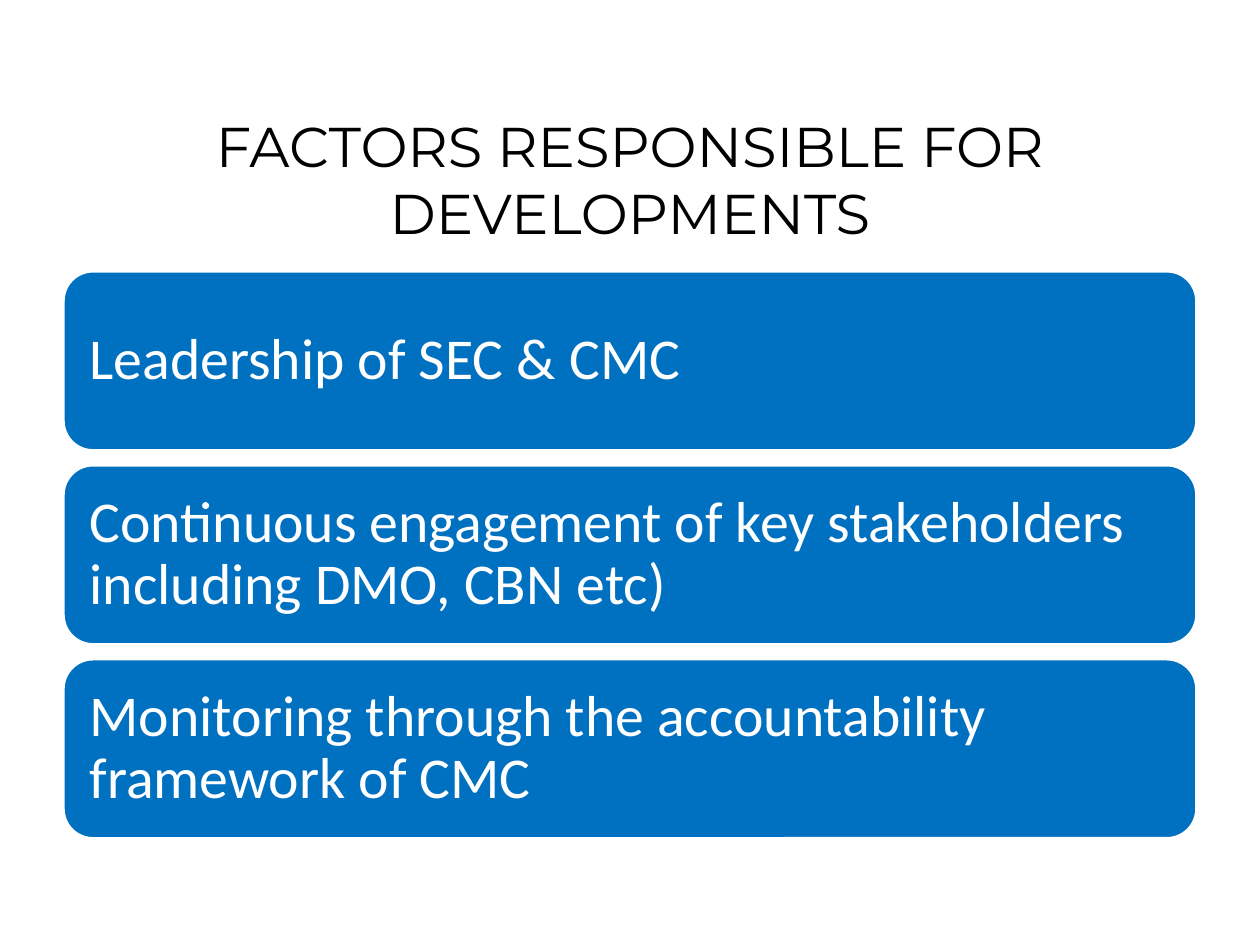
from dataclasses import dataclass

from pptx import Presentation
from pptx.dml.color import RGBColor
from pptx.enum.shapes import MSO_SHAPE
from pptx.enum.text import MSO_ANCHOR, PP_ALIGN
from pptx.util import Cm, Pt


@dataclass(frozen=True)
class Theme:
    black: RGBColor = RGBColor(0x00, 0x00, 0x00)
    white: RGBColor = RGBColor(0xFF, 0xFF, 0xFF)
    blue: RGBColor = RGBColor(0x00, 0x70, 0xC0)
    title_font: str = "Montserrat"
    body_font: str = "Calibri"
    title_size: Pt = Pt(32)
    body_size: Pt = Pt(33)
    outline: Pt = Pt(2)


THEME = Theme()
LEFT, WIDTH = Cm(1.27), Cm(22.86)
FACTORS = [
    "Leadership of SEC & CMC",
    "Continuous engagement of key stakeholders including DMO, CBN etc)",
    "Monitoring through the accountability framework of CMC",
]


def set_all(obj, values):
    for name, value in values.items():
        setattr(obj, name, value)


def write(sp, text, frame, para, font, color):
    tf = sp.text_frame
    set_all(tf, {"word_wrap": True, "vertical_anchor": MSO_ANCHOR.MIDDLE, **frame})
    p = tf.paragraphs[0]
    set_all(p, para)
    r = p.add_run()
    r.text = text
    set_all(r.font, font)
    r.font.color.rgb = color


def add_title(s, text):
    sp = s.shapes.add_textbox(LEFT, Cm(2.31), WIDTH, Cm(2.57))
    write(sp, text, {}, {"alignment": PP_ALIGN.CENTER},
          {"name": THEME.title_font, "size": THEME.title_size}, THEME.black)


def add_factor(s, text, top):
    sp = s.shapes.add_shape(MSO_SHAPE.ROUNDED_RECTANGLE, LEFT, top, WIDTH, Cm(3.63))
    sp.shadow.inherit = False
    sp.fill.solid()
    sp.fill.fore_color.rgb = THEME.blue
    sp.line.color.rgb = THEME.white
    sp.line.width = THEME.outline
    margins = {f"margin_{side}": Cm(0.36) for side in ("left", "top", "right", "bottom")}
    write(sp, text, margins, {"alignment": PP_ALIGN.LEFT, "line_spacing": 0.9},
          {"name": THEME.body_font, "size": THEME.body_size}, THEME.white)


def main():
    prs = Presentation()
    set_all(prs, {"slide_width": Cm(25.4), "slide_height": Cm(19.05)})
    s = prs.slides.add_slide(prs.slide_layouts[6])

    # Heading
    add_title(s, "FACTORS RESPONSIBLE FOR DEVELOPMENTS")

    # Stack of factors at an equal pitch
    for i, text in enumerate(FACTORS):
        add_factor(s, text, Cm(5.46 + 3.91 * i))

    prs.save("out.pptx")


if __name__ == "__main__":
    main()
